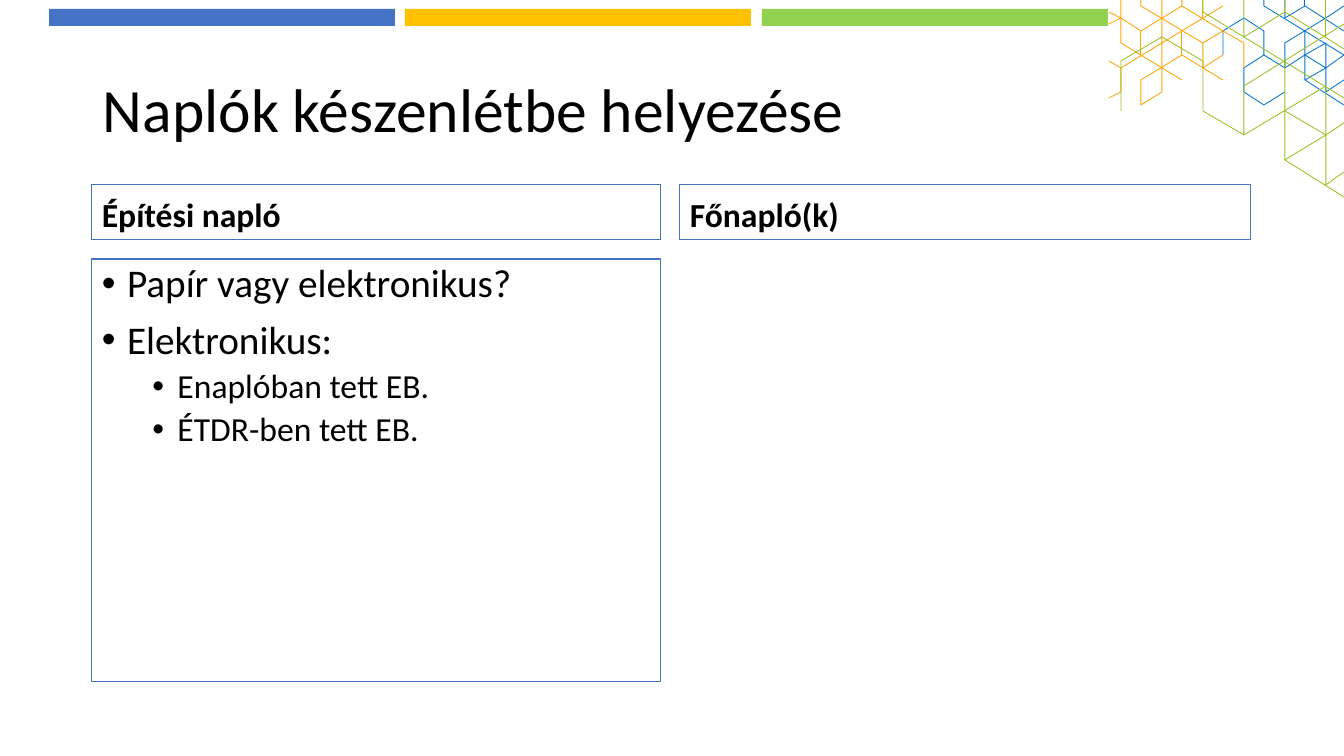
from dataclasses import dataclass

import lxml.etree
import pptx
import pptx.dml.color
import pptx.enum.shapes
import pptx.enum.text
import pptx.oxml.ns
import pptx.util

RGB = pptx.dml.color.RGBColor
ANCHOR = pptx.enum.text.MSO_ANCHOR
BLACK = RGB(0x00, 0x00, 0x00)
BLUE = RGB(0x44, 0x72, 0xC4)
GOLD = RGB(0xFF, 0xC0, 0x00)
LIME = RGB(0x92, 0xD0, 0x50)
NAVY = RGB(0x00, 0x72, 0xCE)
AMBER = RGB(0xFF, 0xA3, 0x00)
GREEN = RGB(0x96, 0xC1, 0x1E)

WIDE, HIGH = 1344, 756
Node = tuple[float, float]


@dataclass
class Bar:
    left: int
    color: RGB


@dataclass
class Mesh:
    color: RGB
    lines: list[list[Node]]


@dataclass
class Line:
    text: str
    size: int
    bold: bool = False
    bullet: bool = False
    level: int = 0
    before: int = 0


@dataclass
class Box:
    left: int
    top: int
    width: int
    height: int
    lines: list[Line]
    anchor: ANCHOR = ANCHOR.TOP
    frame: bool = True


BARS = [Bar(49, BLUE), Bar(405, GOLD), Bar(762, LIME)]

# Strokes of the corner mesh: column and row on a grid of hexagons
MESHES = [
    Mesh(NAVY, [
        [(5, 8), (5, 4), (6, 2), (7, 4), (7, 8), (6, 10), (6, 14), (7, 16), (8, 14)],
        [(7, 8), (8, 10), (9, 8), (9, 12), (11, 16)],
        [(8, 10), (8, 6), (10, 2), (11, 0)],
        [(7, -1), (7, 0), (11, 8)],
        [(8, -1), (8, 2), (9, 0), (11, 4)],
        [(9, -1), (9, 0)],
        [(10, -1), (10, 2)],
        [(9, 4), (9, 8), (10, 6), (10, 14), (11, 12)],
        [(9, 8), (10, 10), (11, 8)],
        [(9, 12), (10, 10)],
    ]),
    Mesh(AMBER, [
        [(0, -1), (0, 6), (3, 12)],
        [(-0.6, 1), (0, 2), (1, 4), (3, 0), (3, -1)],
        [(-0.6, 3), (0, 2)],
        [(1, -1), (1, 0), (4, 6), (5, 4), (3, 0)],
        [(2, -1), (2, 14), (1, 16), (1, 12), (3, 8), (5, 12)],
        [(1, 4), (1, 8)],
        [(3, 4), (3, 8)],
        [(4, -1), (4, 2)],
        [(4, 6), (4, 10), (5, 8)],
        [(5, 0), (0, 10), (0, 14), (-0.6, 15)],
        [(-0.6, 9), (0, 10)],
        [(5, 4), (6, 6), (6, 10)],
    ]),
    Mesh(GREEN, [
        [(0, 17), (0, 9), (2, 5), (4, 9), (4, 17), (6, 21), (10, 13)],
        [(4, -1), (4, 1), (11, 15)],
        [(6, -1), (6, 5), (8, 1), (11, 7)],
        [(8, -1), (8, 1)],
        [(10, -1), (10, 5)],
        [(6, 21), (6, 13), (11, 3)],
        [(8, 9), (8, 25), (11, 31)],
        [(8, 17), (10, 21), (11, 19)],
        [(8, 25), (10, 21)],
        [(10, 13), (10, 29), (11, 27)],
    ]),
]

BOXES = [
    Box(93, 40, 1159, 146, [Line("Naplók készenlétbe helyezése", 44)],
        ANCHOR.MIDDLE, frame=False),
    Box(92, 185, 569, 55, [Line("Építési napló", 24, bold=True)], ANCHOR.BOTTOM),
    Box(92, 259, 569, 423, [
        Line("Papír vagy elektronikus?", 28, bullet=True),
        Line("Elektronikus:", 28, bullet=True, before=10),
        Line("Enaplóban tett EB.", 24, bullet=True, level=1, before=5),
        Line("ÉTDR-ben tett EB.", 24, bullet=True, level=1, before=5),
    ]),
    Box(680, 185, 571, 55, [Line("Főnapló(k)", 24, bold=True)], ANCHOR.BOTTOM),
]


def emu(px: float) -> int:
    return round(px * 914400 / 100.8)


def spot(node: Node) -> tuple[int, int]:
    """Turn a grid node into px, kept on the slide."""
    col, row = node
    return min(round(1121 + 20.45 * col), WIDE), max(round(6 + 6.16 * row), 0)


def draw_bar(slide, bar: Bar) -> None:
    shape = slide.shapes.add_shape(pptx.enum.shapes.MSO_SHAPE.RECTANGLE,
                                   emu(bar.left), emu(9), emu(346), emu(17))
    shape.shadow.inherit = False
    shape.fill.solid()
    shape.fill.fore_color.rgb = bar.color
    shape.line.fill.background()


def draw_mesh(slide, mesh: Mesh) -> None:
    pen = slide.shapes.build_freeform(*spot(mesh.lines[0][0]), scale=emu(1))
    for index, line in enumerate(mesh.lines):
        first, *rest = map(spot, line)
        if index:
            pen.move_to(*first)
        pen.add_line_segments(rest, close=False)
    shape = pen.convert_to_shape()
    shape.shadow.inherit = False
    shape.fill.background()
    shape.line.color.rgb = mesh.color
    shape.line.width = pptx.util.Pt(0.6)


def add_bullet(para, level: int) -> None:
    props = para._p.get_or_add_pPr()
    props.set("marL", str(pptx.util.Inches(0.25 + 0.5 * level)))
    props.set("indent", str(pptx.util.Inches(-0.25)))
    qn = pptx.oxml.ns.qn
    lxml.etree.SubElement(props, qn("a:buFont"), typeface="Arial")
    lxml.etree.SubElement(props, qn("a:buChar"), char="•")


def put_text(para, text: str, *, size: int, bold: bool = False,
             bullet: bool = False, level: int = 0, before: int = 0) -> None:
    if bullet:
        add_bullet(para, level)
    para.level = level
    para.line_spacing = 0.9
    para.space_before = pptx.util.Pt(before)
    run = para.add_run()
    run.text = text
    run.font.name = "Calibri"
    run.font.size = pptx.util.Pt(size)
    run.font.bold = bold
    run.font.color.rgb = BLACK


def draw_box(slide, box: Box) -> None:
    shape = slide.shapes.add_textbox(emu(box.left), emu(box.top),
                                     emu(box.width), emu(box.height))
    if box.frame:
        shape.line.color.rgb = BLUE
        shape.line.width = pptx.util.Pt(0.75)
    body = shape.text_frame
    body.word_wrap = True
    body.vertical_anchor = box.anchor
    for index, line in enumerate(box.lines):
        para = body.add_paragraph() if index else body.paragraphs[0]
        put_text(para, line.text, size=line.size, bold=line.bold,
                 bullet=line.bullet, level=line.level, before=line.before)


def main() -> None:
    deck = pptx.Presentation()
    deck.slide_width, deck.slide_height = emu(WIDE), emu(HIGH)
    slide = deck.slides.add_slide(deck.slide_layouts[6])
    # Top band and corner mesh
    for bar in BARS:
        draw_bar(slide, bar)
    for mesh in MESHES:
        draw_mesh(slide, mesh)
    # Title and columns
    for box in BOXES:
        draw_box(slide, box)
    deck.save("out.pptx")


if __name__ == "__main__":
    main()
